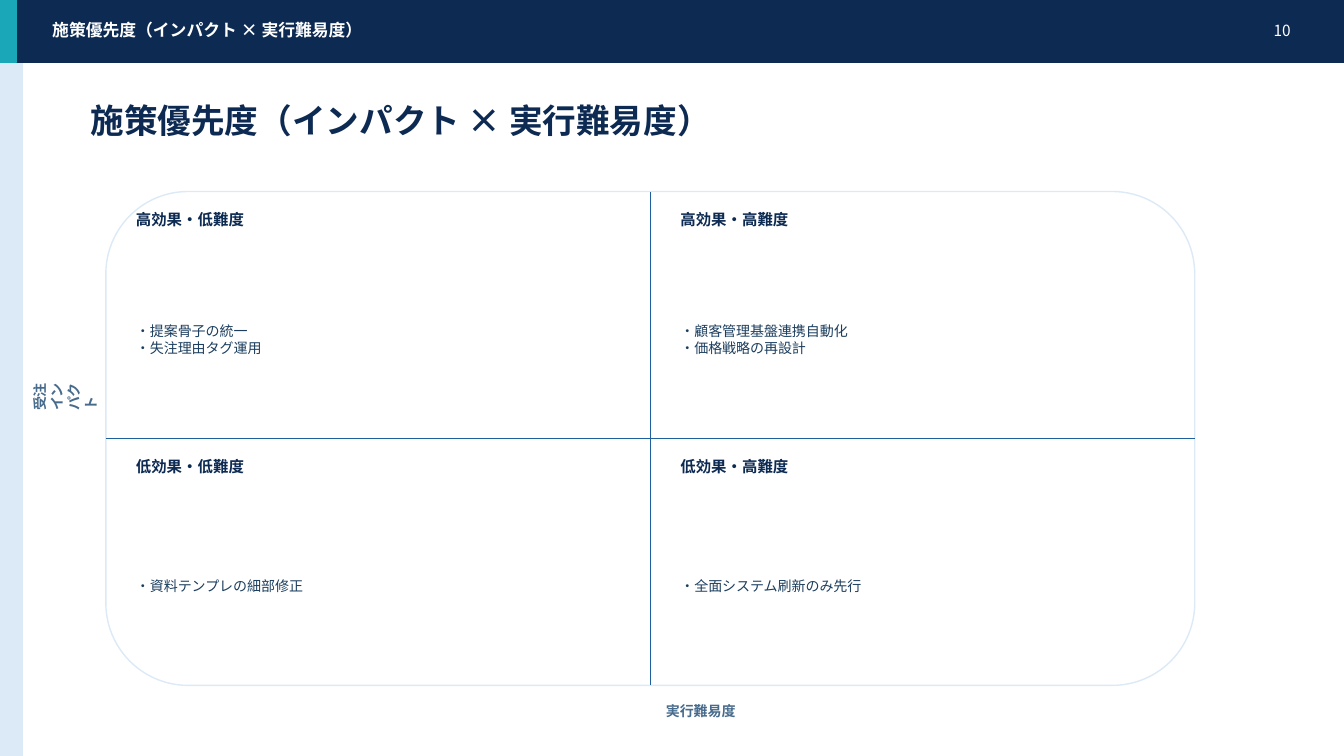
from lxml.etree import SubElement
from pptx import Presentation
from pptx.dml.color import RGBColor
from pptx.enum.shapes import MSO_CONNECTOR, MSO_SHAPE
from pptx.enum.text import MSO_ANCHOR, PP_ALIGN
from pptx.oxml.ns import qn
from pptx.util import Inches, Pt

FONT = "Noto Sans CJK JP"
NAVY = RGBColor(0x0D, 0x2A, 0x52)
TEAL = RGBColor(0x1A, 0xA8, 0xB8)
PALE_BLUE = RGBColor(0xDC, 0xEA, 0xF7)
AXIS_BLUE = RGBColor(0x1D, 0x5F, 0x9F)
LABEL_BLUE = RGBColor(0x47, 0x6B, 0x8C)
BODY_BLUE = RGBColor(0x1C, 0x3E, 0x5E)
WHITE = RGBColor(0xFF, 0xFF, 0xFF)

TITLE = "施策優先度（インパクト × 実行難易度）"

presentation = Presentation()
presentation.slide_width = Inches(13.33)
presentation.slide_height = Inches(7.5)
slide = presentation.slides.add_slide(presentation.slide_layouts[6])


def add_panel(left, top, width, height, fill, line, kind=MSO_SHAPE.RECTANGLE):
    shape = slide.shapes.add_shape(
        kind, Inches(left), Inches(top), Inches(width), Inches(height))
    shape.shadow.inherit = False
    shape.fill.solid()
    shape.fill.fore_color.rgb = fill
    shape.line.color.rgb = line
    shape.line.width = Pt(1)


def add_text(text, left, top, width, height, size, color,
             bold=False, align=PP_ALIGN.LEFT, rotation=0):
    """Add a text box with one paragraph for each line of text."""
    box = slide.shapes.add_textbox(
        Inches(left), Inches(top), Inches(width), Inches(height))
    box.rotation = rotation
    frame = box.text_frame
    frame.word_wrap = True
    frame.vertical_anchor = MSO_ANCHOR.MIDDLE
    frame.text = text
    for paragraph in frame.paragraphs:
        paragraph.alignment = align
        for run in paragraph.runs:
            run.font.name = FONT
            run.font.size = Pt(size)
            run.font.bold = bold
            run.font.color.rgb = color
            SubElement(run.font._element, qn("a:ea"), typeface=FONT)


# Side band, header and title
add_panel(0, 0.55, 0.22, 6.95, PALE_BLUE, PALE_BLUE)
add_panel(0, 0, 13.33, 0.62, NAVY, NAVY)
add_panel(0, 0, 0.16, 0.62, TEAL, TEAL)
add_text(TITLE, 0.42, 0.17, 8.8, 0.26, 12, WHITE, bold=True)
add_text("10", 12.15, 0.17, 0.75, 0.26, 11, WHITE, align=PP_ALIGN.RIGHT)
add_text(TITLE, 0.8, 0.95, 11.4, 0.48, 24, NAVY, bold=True)

# Matrix frame and its dividing lines
left, top, width, height = 1.05, 1.9, 10.8, 4.9
center_x, center_y = left + width / 2, top + height / 2
add_panel(left, top, width, height, WHITE, PALE_BLUE, MSO_SHAPE.ROUNDED_RECTANGLE)
dividers = [
    (center_x, top, center_x, top + height),
    (left, center_y, left + width, center_y),
]
for ends in dividers:
    divider = slide.shapes.add_connector(
        MSO_CONNECTOR.STRAIGHT, *[Inches(value) for value in ends])
    divider.line.color.rgb = AXIS_BLUE
    divider.line.width = Pt(1)
    SubElement(divider._element.spPr, qn("a:effectLst"))

# Axis labels
add_text("受注インパクト", 0.35, 3.75, 0.6, 0.25, 10, LABEL_BLUE,
         bold=True, rotation=270)
add_text("実行難易度", 5.8, 6.95, 2.3, 0.2, 10, LABEL_BLUE,
         bold=True, align=PP_ALIGN.CENTER)

# Quadrants, row by row
quadrants = [
    ("高効果・低難度", "・提案骨子の統一\n・失注理由タグ運用"),
    ("高効果・高難度", "・顧客管理基盤連携自動化\n・価格戦略の再設計"),
    ("低効果・低難度", "・資料テンプレの細部修正"),
    ("低効果・高難度", "・全面システム刷新のみ先行"),
]
for index, (heading, measures) in enumerate(quadrants):
    row, column = divmod(index, 2)
    text_left = left + column * width / 2 + 0.2
    quadrant_top = top + row * height / 2
    add_text(heading, text_left, quadrant_top + 0.15, 5, 0.25, 11, NAVY, bold=True)
    add_text(measures, text_left, quadrant_top + 0.49, 4.8, 1.95, 10, BODY_BLUE)

presentation.save("out.pptx")
